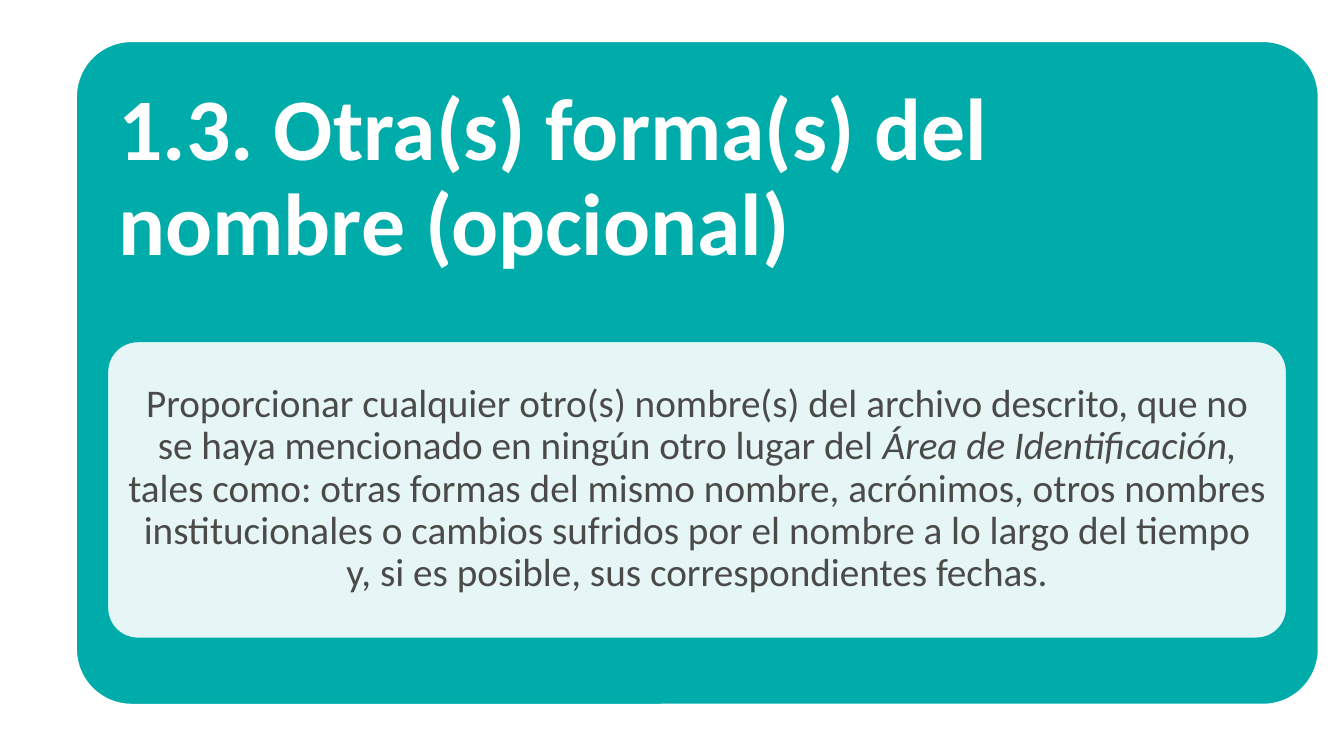
from lxml import etree
from pptx import Presentation
from pptx.dml.color import RGBColor
from pptx.enum import shapes, text
from pptx.oxml.ns import qn
from pptx.util import Cm, Pt

TEAL = RGBColor(0x00, 0xAC, 0xA9)
WHITE = RGBColor(0xFF, 0xFF, 0xFF)
GREY = RGBColor(0x4A, 0x4A, 0x49)


def add_panel(s, box, radius, fill, line, opacity=100):
    """Add a rounded rectangle with a 2 pt outline."""
    sp = s.shapes.add_shape(shapes.MSO_SHAPE.ROUNDED_RECTANGLE, *map(Cm, box))
    sp.shadow.inherit = False
    sp.adjustments[0] = radius
    sp.fill.solid()
    sp.fill.fore_color.rgb = fill
    sp.line.color.rgb = line
    sp.line.width = Pt(2)
    if opacity < 100:
        color = sp._element.spPr.find(qn("a:solidFill"))[0]
        etree.SubElement(color, qn("a:alpha"), val=str(opacity * 1000))


def add_text(s, box, runs, inset, anchor, font, color, align):
    """Add one paragraph made of (wording, italic) runs."""
    tf = s.shapes.add_textbox(*map(Cm, box)).text_frame
    frame = {"word_wrap": True, "auto_size": text.MSO_AUTO_SIZE.NONE,
             "vertical_anchor": anchor}
    for side in ("left", "top", "right", "bottom"):
        frame[f"margin_{side}"] = Cm(inset)
    for name, value in frame.items():
        setattr(tf, name, value)
    p = tf.paragraphs[0]
    p.alignment = align
    p.line_spacing = 0.9
    for wording, italic in runs:
        r = p.add_run()
        r.text = wording
        for name, value in {"name": "Calibri", "italic": italic, **font}.items():
            setattr(r.font, name, value)
        r.font.color.rgb = color


def main():
    prs = Presentation()
    prs.slide_width, prs.slide_height = Cm(25.4), Cm(14.28)
    s = prs.slides.add_slide(prs.slide_layouts[6])

    # Teal card with its heading
    add_panel(s, (1.42, 0.76, 23.52, 12.57), 0.085, TEAL, WHITE)
    add_text(s, (1.73, 1.09, 22.89, 5.2),
             [("1.3. Otra(s) forma(s) del nombre (opcional)", False)],
             0.51, text.MSO_ANCHOR.TOP,
             {"size": Pt(47), "bold": True}, WHITE, text.PP_ALIGN.LEFT)

    # Pale inner card with the explanation
    add_panel(s, (2.01, 6.43, 22.33, 5.65), 0.105, WHITE, TEAL, opacity=90)
    add_text(s, (2.18, 6.59, 22, 5.31),
             [("Proporcionar cualquier otro(s) nombre(s) del archivo descrito, "
               "que no se haya mencionado en ningún otro lugar del ", False),
              ("Área de Identificación, ", True),
              ("tales como: otras formas del mismo nombre, acrónimos, otros "
               "nombres institucionales o cambios sufridos por el nombre a lo "
               "largo del tiempo y, si es posible, sus correspondientes fechas.",
               False)],
             0.23, text.MSO_ANCHOR.MIDDLE,
             {"size": Pt(21)}, GREY, text.PP_ALIGN.CENTER)

    prs.save("out.pptx")


if __name__ == "__main__":
    main()
